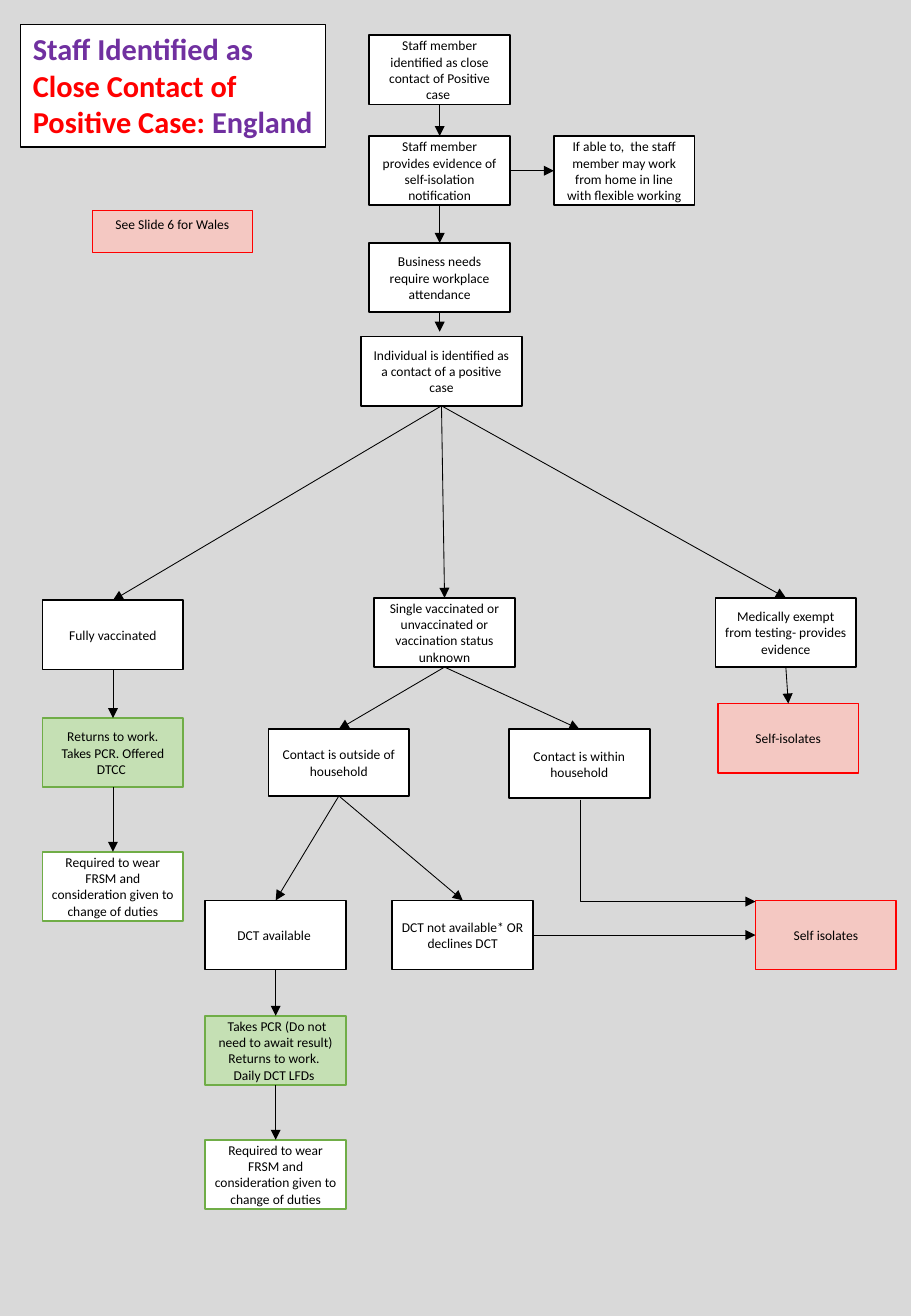
import dataclasses

import pptx
import pptx.dml.color
import pptx.enum.shapes
import pptx.enum.text
import pptx.oxml
import pptx.oxml.ns
import pptx.util

Inches = pptx.util.Inches
Pt = pptx.util.Pt
ALIGN = pptx.enum.text.PP_ALIGN
ANCHOR = pptx.enum.text.MSO_ANCHOR
KIND = pptx.enum.shapes.MSO_CONNECTOR
TOP, LEFT, BOTTOM, RIGHT = range(4)
WIDE, HIGH = 1.16, 0.57


@dataclasses.dataclass(frozen=True)
class Theme:
    font: str = "Calibri"
    head: float = 18
    body: float = 8
    thick: float = 1
    mid: float = 0.75
    thin: float = 0.5
    back: str = "D9D9D9"
    white: str = "FFFFFF"
    black: str = "000000"
    red: str = "FF0000"
    pink: str = "F4C8C2"
    green: str = "70AD47"
    mint: str = "C5E0B4"
    purple: str = "7030A0"


THEME = Theme()
PLAIN = THEME.white, THEME.black
STOP = THEME.pink, THEME.red
WORK = THEME.mint, THEME.green
CARE = THEME.white, THEME.green


def rgb(code):
    return pptx.dml.color.RGBColor.from_string(code)


def paint(shape, look, width):
    fill, edge = look
    shape.fill.solid()
    shape.fill.fore_color.rgb = rgb(fill)
    shape.line.color.rgb = rgb(edge)
    shape.line.width = Pt(width)


def write(para, text, size, color, bold=False):
    run = para.add_run()
    run.text = text
    run.font.name = THEME.font
    run.font.size = Pt(size)
    run.font.bold = bold
    run.font.color.rgb = rgb(color)


def inset(frame, side, edge):
    frame.margin_left = frame.margin_right = Inches(side)
    frame.margin_top = frame.margin_bottom = Inches(edge)


def add_title(slide, parts):
    title = slide.shapes.title
    title.left, title.top = Inches(0.17), Inches(0.2)
    title.width, title.height = Inches(2.51), Inches(1.01)
    paint(title, PLAIN, THEME.mid)
    frame = title.text_frame
    frame.word_wrap = True
    frame.auto_size = pptx.enum.text.MSO_AUTO_SIZE.NONE
    frame.vertical_anchor = ANCHOR.TOP
    inset(frame, 0.1, 0.05)
    frame.margin_right = Inches(0.05)
    para = frame.paragraphs[0]
    para.alignment = ALIGN.LEFT
    for text, color in parts:
        write(para, text, THEME.head, color, True)


def add_box(slide, left, top, lines, look=PLAIN, wide=WIDE, high=HIGH, width=THEME.thick):
    box = slide.shapes.add_shape(
        pptx.enum.shapes.MSO_SHAPE.RECTANGLE,
        Inches(left), Inches(top), Inches(wide), Inches(high))
    box.shadow.inherit = False
    paint(box, look, width)
    frame = box.text_frame
    frame.word_wrap = True
    frame.vertical_anchor = ANCHOR.MIDDLE
    inset(frame, 0.07, 0.03)
    for index, text in enumerate(lines):
        para = frame.add_paragraph() if index else frame.paragraphs[0]
        para.alignment = ALIGN.CENTER
        write(para, text, THEME.body, THEME.black)
    return box


def add_note(slide, text):
    note = add_box(slide, 0.76, 1.73, [text], STOP, 1.32, 0.35, THEME.mid)
    note.text_frame.vertical_anchor = ANCHOR.TOP
    inset(note.text_frame, 0.1, 0.05)


def add_arrow(slide, start=(0, 0), end=(0, 0), kind=KIND.STRAIGHT):
    points = [Inches(value) for value in (*start, *end)]
    arrow = slide.shapes.add_connector(kind, *points)
    arrow.line.color.rgb = rgb(THEME.black)
    arrow.line.width = Pt(THEME.thin)
    tail = pptx.oxml.parse_xml(
        f'<a:tailEnd {pptx.oxml.ns.nsdecls("a")} type="triangle"/>')
    arrow.line._get_or_add_ln().append(tail)
    bare = pptx.oxml.parse_xml(f'<a:effectLst {pptx.oxml.ns.nsdecls("a")}/>')
    arrow._element.spPr.append(bare)
    return arrow


def join(slide, first, last, out=BOTTOM, into=TOP):
    arrow = add_arrow(slide)
    arrow.begin_connect(first, out)
    arrow.end_connect(last, into)


def add_bend(slide, start, end):
    across, down = end[0] - start[0], end[1] - start[1]
    mid_x, mid_y = start[0] + across / 2, start[1] + down / 2
    bend = add_arrow(
        slide, (mid_x - down / 2, mid_y - across / 2),
        (mid_x + down / 2, mid_y + across / 2), KIND.ELBOW)
    props = bend._element.spPr
    props.find(pptx.oxml.ns.qn("a:prstGeom")).set("prst", "bentConnector2")
    frame = props.find(pptx.oxml.ns.qn("a:xfrm"))
    frame.set("rot", "16200000")
    frame.set("flipH", "1")


def main():
    deck = pptx.Presentation()
    deck.slide_width, deck.slide_height = Inches(7.5), Inches(10.83)
    slide = deck.slides.add_slide(deck.slide_layouts[5])
    slide.background.fill.solid()
    slide.background.fill.fore_color.rgb = rgb(THEME.back)

    add_title(slide, [
        ("Staff Identified as ", THEME.purple),
        ("Close Contact of Positive Case: ", THEME.red),
        ("England", THEME.purple)])
    add_note(slide, "See Slide 6 for Wales")

    duty = ["Required to wear FRSM and consideration given to change of duties"]
    boxes = {
        "staff": (3.04, 0.29, ["Staff member identified as close contact of Positive case "]),
        "proof": (3.04, 1.12, ["Staff member provides evidence of self-isolation notification"]),
        "home": (4.56, 1.12, [
            "If able to,  the staff member may work from home in line with flexible working"]),
        "needs": (3.04, 2, ["Business needs require workplace attendance"]),
        "case": (2.97, 2.77, [
            "Individual is identified as a contact of a positive case"], PLAIN, 1.33),
        "full": (0.35, 4.94, ["Fully vaccinated"]),
        "single": (3.08, 4.92, [
            "Single vaccinated or unvaccinated or vaccination status unknown"]),
        "exempt": (5.89, 4.92, ["Medically exempt from testing- provides evidence"]),
        "alone": (5.91, 5.79, ["Self-isolates"], STOP),
        "back": (0.35, 5.91, ["Returns to work. Takes PCR. Offered DTCC "], WORK),
        "mask": (0.35, 7.01, duty, CARE),
        "outer": (2.21, 6, ["Contact is outside of household"], PLAIN, WIDE, 0.55),
        "inner": (4.19, 6, ["Contact is within household"]),
        "test": (1.69, 7.41, ["DCT available "]),
        "none": (3.23, 7.41, ["DCT not available* OR declines DCT"]),
        "stay": (6.22, 7.41, ["Self isolates"], STOP),
        "daily": (1.69, 8.36, [
            " Takes PCR (Do not need to await result)",
            "Returns to work. ", "Daily DCT LFDs "], WORK),
        "wear": (1.69, 9.38, duty, CARE),
    }
    nodes = {name: add_box(slide, *spec) for name, spec in boxes.items()}

    for first, last in [
            ("staff", "proof"), ("proof", "needs"),
            ("case", "full"), ("case", "single"), ("case", "exempt"),
            ("full", "back"), ("back", "mask"), ("exempt", "alone"),
            ("single", "outer"), ("single", "inner"),
            ("outer", "test"), ("outer", "none"),
            ("test", "daily"), ("daily", "wear")]:
        join(slide, nodes[first], nodes[last])
    for first, last in [("proof", "home"), ("none", "stay")]:
        join(slide, nodes[first], nodes[last], RIGHT, LEFT)

    add_arrow(slide, (3.62, 2.57), (3.62, 2.73)).begin_connect(nodes["needs"], BOTTOM)
    add_bend(slide, (4.78, 6.58), (6.22, 7.42))
    deck.save("out.pptx")


if __name__ == "__main__":
    main()
